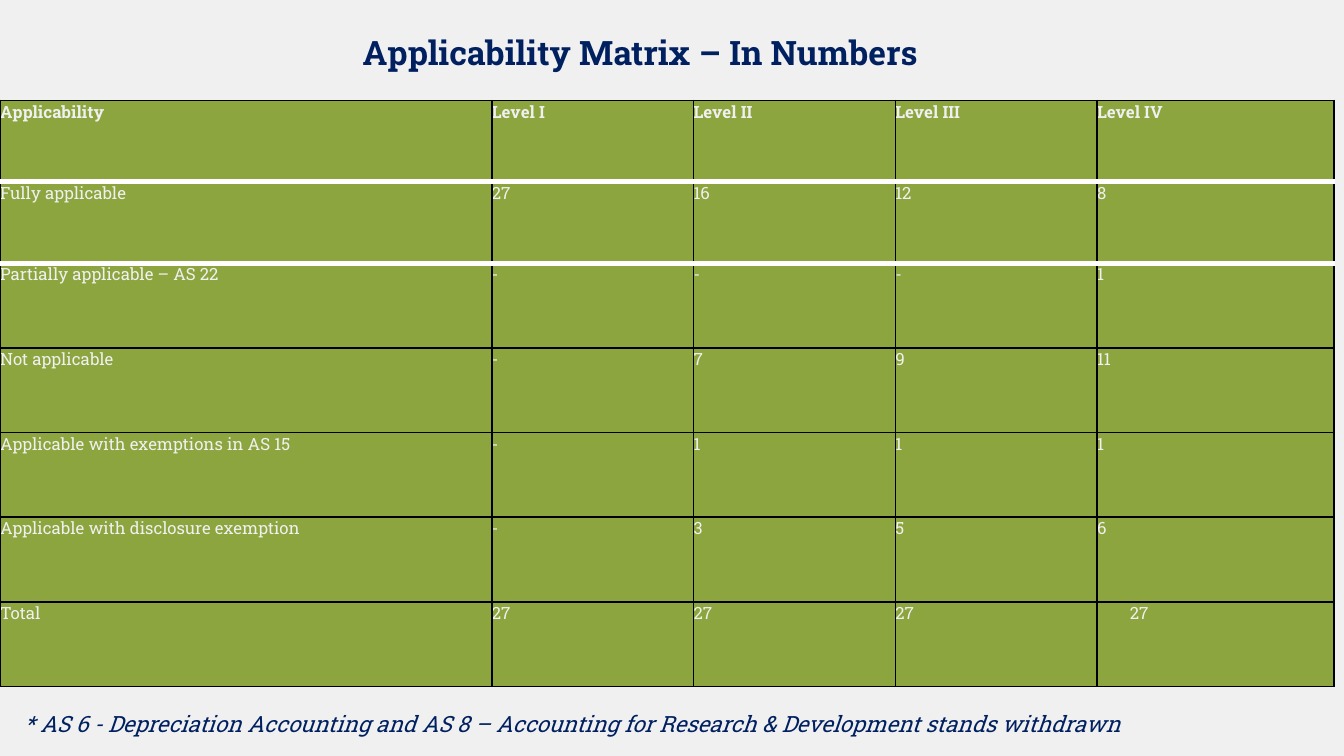
import pptx
import pptx.util
import pptx.dml.color
import pptx.enum.text
import pptx.oxml
import pptx.oxml.ns
import lxml.etree

NAVY = pptx.dml.color.RGBColor(0x00, 0x20, 0x60)
GREEN = pptx.dml.color.RGBColor(0x8C, 0xA5, 0x3E)
PALE = pptx.dml.color.RGBColor(0xF0, 0xF0, 0xF0)
WHITE = pptx.dml.color.RGBColor(0xFF, 0xFF, 0xFF)
BLACK = pptx.dml.color.RGBColor(0x00, 0x00, 0x00)

CENTER = pptx.enum.text.PP_ALIGN.CENTER
LEFT = pptx.enum.text.PP_ALIGN.LEFT


class Deck:
    """Style and current slide; lengths are in grid steps, 10 to the inch."""

    FONT = "Roboto Slab"
    COLS, ROWS = 100, 56.25

    def __init__(self):
        self.prs = pptx.Presentation()
        self.prs.slide_width = self.grid(self.COLS)
        self.prs.slide_height = self.grid(self.ROWS)
        self.slide = self.prs.slides.add_slide(self.prs.slide_layouts[6])
        self.slide.background.fill.solid()
        self.slide.background.fill.fore_color.rgb = PALE

    @staticmethod
    def grid(steps):
        return pptx.util.Inches(steps / 10)

    def style(self, p, size, color, bold=False, italic=False):
        p.font.name = self.FONT
        p.font.size = pptx.util.Pt(size)
        p.font.color.rgb = color
        p.font.bold = bold
        p.font.italic = italic

    def text(self, box, words, size, align=LEFT, inset=0, **look):
        sp = self.slide.shapes.add_textbox(*map(self.grid, box))
        tf = sp.text_frame
        tf.word_wrap = True
        tf.margin_left = tf.margin_right = self.grid(inset)
        tf.margin_top = tf.margin_bottom = self.grid(inset)
        p = tf.paragraphs[0]
        p.text = words
        p.alignment = align
        self.style(p, size, NAVY, **look)

    def border(self, cell, side, color, width):
        ln = lxml.etree.SubElement(
            cell._tc.get_or_add_tcPr(), pptx.oxml.ns.qn(f"a:ln{side}"),
            w=str(pptx.util.Pt(width)))
        fill = lxml.etree.SubElement(ln, pptx.oxml.ns.qn("a:solidFill"))
        lxml.etree.SubElement(fill, pptx.oxml.ns.qn("a:srgbClr"), val=str(color))

    def table(self, left, top, widths, heights, rows, white_rules):
        """Draw a table; white_rules are the row numbers with white above."""
        table = self.slide.shapes.add_table(
            len(rows), len(widths), self.grid(left), self.grid(top),
            self.grid(sum(widths)), self.grid(sum(heights))).table
        for column, width in zip(table.columns, widths):
            column.width = self.grid(width)
        for i, (row, height) in enumerate(zip(rows, heights)):
            table.rows[i].height = self.grid(height)
            for j, words in enumerate(row):
                cell = table.cell(i, j)
                cell.margin_left = cell.margin_right = 0
                cell.margin_top = cell.margin_bottom = 0
                # Borders come before the fill in the cell properties
                for side, edge in (("L", None), ("R", None), ("T", i), ("B", i + 1)):
                    rule = (WHITE, 3) if edge in white_rules else (BLACK, 1)
                    self.border(cell, side, *rule)
                cell.fill.solid()
                cell.fill.fore_color.rgb = GREEN
                p = cell.text_frame.paragraphs[0]
                p.text = words
                self.style(p, 9, PALE, bold=i == 0)
        return table


MATRIX = [
    ("Applicability", "Level I", "Level II", "Level III", "Level IV"),
    ("Fully applicable", "27", "16", "12", "8"),
    ("Partially applicable – AS 22", "-", "-", "-", "1"),
    ("Not applicable", "-", "7", "9", "11"),
    ("Applicable with exemptions in AS 15", "-", "1", "1", "1"),
    ("Applicable with disclosure exemption", "-", "3", "5", "6"),
    ("Total", "27", "27", "27", "27"),
]


def main():
    deck = Deck()

    # Title
    deck.text((20, 2.4, 55.3, 3), "Applicability Matrix – In Numbers", 18,
              align=CENTER, bold=True)

    # Applicability matrix, with the last total set in from the cell edge
    table = deck.table(0, 7.47, [36.6] + [15.01] * 3 + [17.65],
                       [6.06] * 2 + [6.3] * 5, MATRIX, white_rules=(1, 2))
    total = table.cell(6, 4).text_frame.paragraphs[0]
    total._p.get_or_add_pPr().set("marL", str(deck.grid(2.45)))

    # Footnote
    deck.text((1.1, 52.15, 97.3, 3.5),
              "* AS 6 - Depreciation Accounting and AS 8 – Accounting for "
              "Research & Development stands withdrawn",
              12, inset=0.7, italic=True)

    deck.prs.save("out.pptx")


if __name__ == "__main__":
    main()
